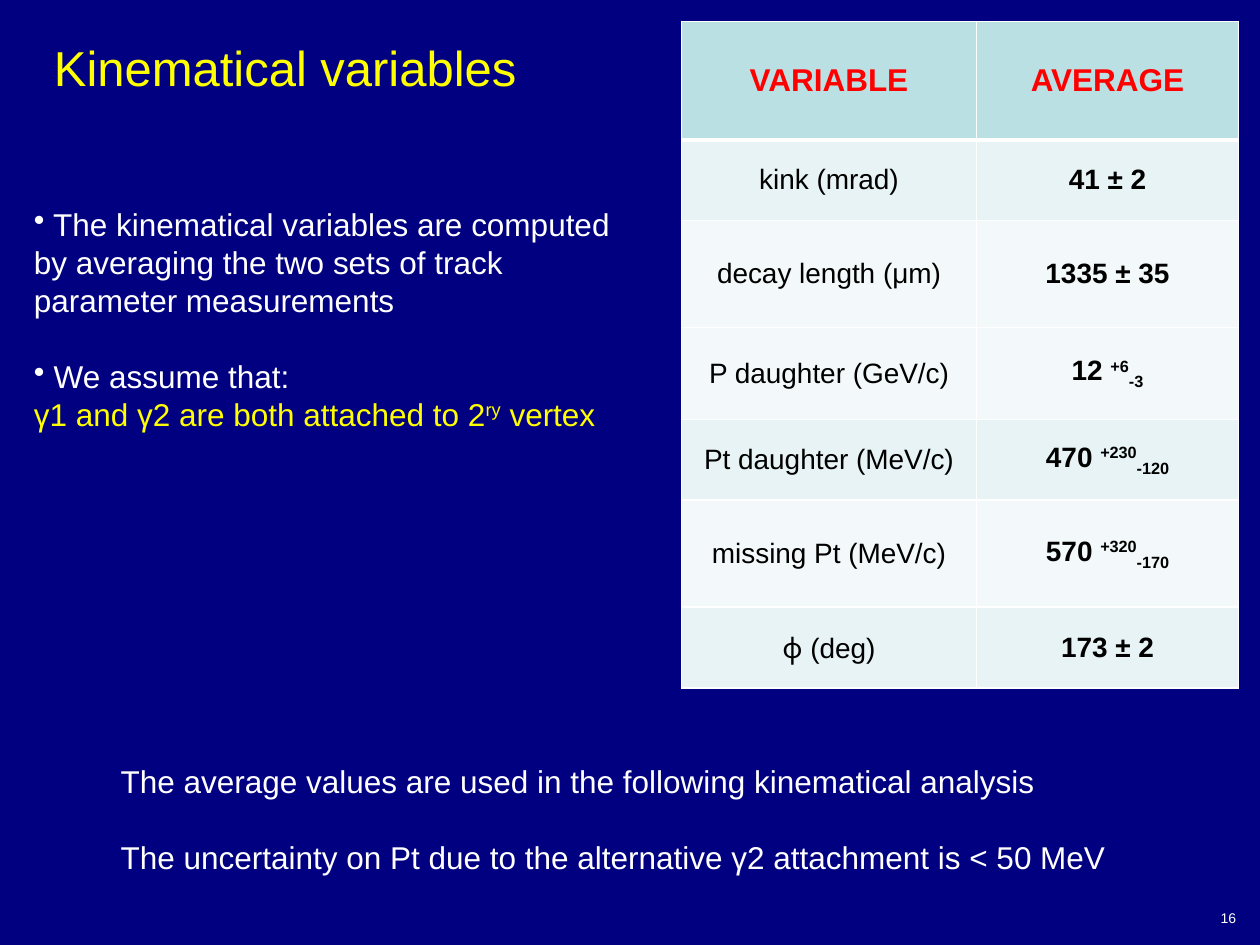
from pptx import Presentation
from pptx.dml.color import RGBColor
from pptx.enum.text import MSO_ANCHOR, PP_ALIGN
from pptx.oxml.ns import qn
from pptx.util import Inches, Pt
from lxml.etree import SubElement

NAVY = RGBColor(0x00, 0x00, 0x80)
YELLOW = RGBColor(0xFF, 0xFF, 0x00)
WHITE = RGBColor(0xFF, 0xFF, 0xFF)
BLACK = RGBColor(0x00, 0x00, 0x00)
RED = RGBColor(0xFF, 0x00, 0x00)
TEAL = RGBColor(0xBB, 0xE0, 0xE3)
MIST = RGBColor(0xE7, 0xF3, 0xF4)
FROST = RGBColor(0xF3, 0xF9, 0xFA)

SUPER, SUB = 30000, -25000
LINE_GAP = 21.8


class SlideBuilder:
    """Draws styled elements on one slide, placed on a grid of 100 columns by 75 rows."""

    font_name = "Arial"
    columns, rows = 100, 75

    def __init__(self, deck, background):
        self.column = deck.slide_width / self.columns
        self.row = deck.slide_height / self.rows
        self.page = deck.slides.add_slide(deck.slide_layouts[6])
        fill = self.page.background.fill
        fill.solid()
        fill.fore_color.rgb = background

    def place(self, left, top, width, height):
        return (round(left * self.column), round(top * self.row),
                round(width * self.column), round(height * self.row))

    def span(self, para, text, size, color, bold=False, baseline=0, font=None):
        span = para.add_run()
        span.text = text
        span.font.name = font or self.font_name
        span.font.size = Pt(size)
        span.font.bold = bold
        span.font.color.rgb = color
        if baseline:
            span.font._element.set("baseline", str(baseline))

    def text(self, area, paragraphs, size, color=WHITE, wrap=False, align=PP_ALIGN.LEFT):
        frame = self.page.shapes.add_textbox(*self.place(*area)).text_frame
        frame.word_wrap = wrap
        for index, (spans, bullet, gap) in enumerate(paragraphs):
            para = frame.add_paragraph() if index else frame.paragraphs[0]
            para.alignment = align
            if gap:
                para.space_before = Pt(gap)
            if bullet:
                properties = para._p.get_or_add_pPr()
                properties.set("marL", "0")
                properties.set("indent", "0")
                SubElement(properties, qn("a:buChar")).set("char", "•")
            for text, style in spans:
                self.span(para, text, size, **{"color": color, **style})

    def border(self, cell, side, width):
        line = SubElement(cell._tc.get_or_add_tcPr(), qn(f"a:ln{side}"), w=str(Pt(width)))
        SubElement(SubElement(line, qn("a:solidFill")), qn("a:srgbClr"), val=str(WHITE))

    def table(self, area, widths, heights, records):
        table = self.page.shapes.add_table(
            len(heights), len(widths), *self.place(*area)).table
        for column, width in zip(table.columns, widths):
            column.width = round(width * self.column)
        for number, (height, (shade, *entries)) in enumerate(zip(heights, records)):
            table.rows[number].height = round(height * self.row)
            for position, spans in enumerate(entries):
                self.cell(table.cell(number, position), number, position, shade, spans)

    def cell(self, cell, number, position, shade, spans):
        header = number == 0
        widths = {"L": 1, "R": 1, "T": 3 if number == 1 else 1, "B": 3 if header else 1}
        for side, width in widths.items():
            self.border(cell, side, width)
        cell.fill.solid()
        cell.fill.fore_color.rgb = shade
        cell.vertical_anchor = MSO_ANCHOR.MIDDLE
        para = cell.text_frame.paragraphs[0]
        para.alignment = PP_ALIGN.CENTER
        for text, style in spans:
            self.span(para, text, 18 if header else 16, RED if header else BLACK,
                      bold=header or position == 1, **style)


def plain(text):
    return [(text, {})]


def asymmetric(value, upper, lower):
    return [(f"{value} ", {}), (f"+{upper}", {"baseline": SUPER}),
            (f"-{lower}", {"baseline": SUB})]


def main():
    deck = Presentation()
    deck.slide_width, deck.slide_height = Inches(10), Inches(7.5)
    slide = SlideBuilder(deck, NAVY)

    slide.text((3.3, 2.5, 39.1, 5.7), [(plain("Kinematical variables"), False, 0)], 28, YELLOW)

    slide.table((54.1, 1.7, 44.2, 52.9), (23.4, 20.8), (9.4, 6.4, 8.5, 7.3, 6.4, 8.5, 6.4), [
        (TEAL, plain("VARIABLE"), plain("AVERAGE")),
        (MIST, plain("kink (mrad)"), plain("41 ± 2")),
        (FROST, plain("decay length (μm)"), plain("1335 ± 35")),
        (FROST, plain("P daughter (GeV/c)"), asymmetric(12, 6, 3)),
        (MIST, plain("Pt daughter (MeV/c)"), asymmetric(470, 230, 120)),
        (FROST, plain("missing Pt (MeV/c)"), asymmetric(570, 320, 170)),
        (MIST, [("ϕ", {"font": "Open Sans"}), (" (deg)", {})], plain("173 ± 2")),
    ])

    slide.text((8.6, 60, 80.6, 10.1), [
        (plain("The average values are used in the following kinematical analysis"), False, 0),
        (plain("The uncertainty on Pt due to the alternative γ2 attachment is < 50 MeV"),
         False, LINE_GAP),
    ], 18)

    slide.text((1.7, 15.8, 50, 25.2), [
        (plain(" The kinematical variables are computed by averaging "
               "the two sets of track parameter measurements"), True, 0),
        (plain(" We assume that:"), True, LINE_GAP),
        ([("γ1 and γ2 are both attached to 2", {"color": YELLOW}),
          ("ry", {"color": YELLOW, "baseline": SUPER}),
          (" vertex", {"color": YELLOW})], False, 0),
    ], 18, wrap=True)

    slide.text((78.3, 71.7, 20.8, 2.5), [(plain("16"), False, 0)], 8,
               wrap=True, align=PP_ALIGN.RIGHT)

    deck.save("out.pptx")


if __name__ == "__main__":
    main()
